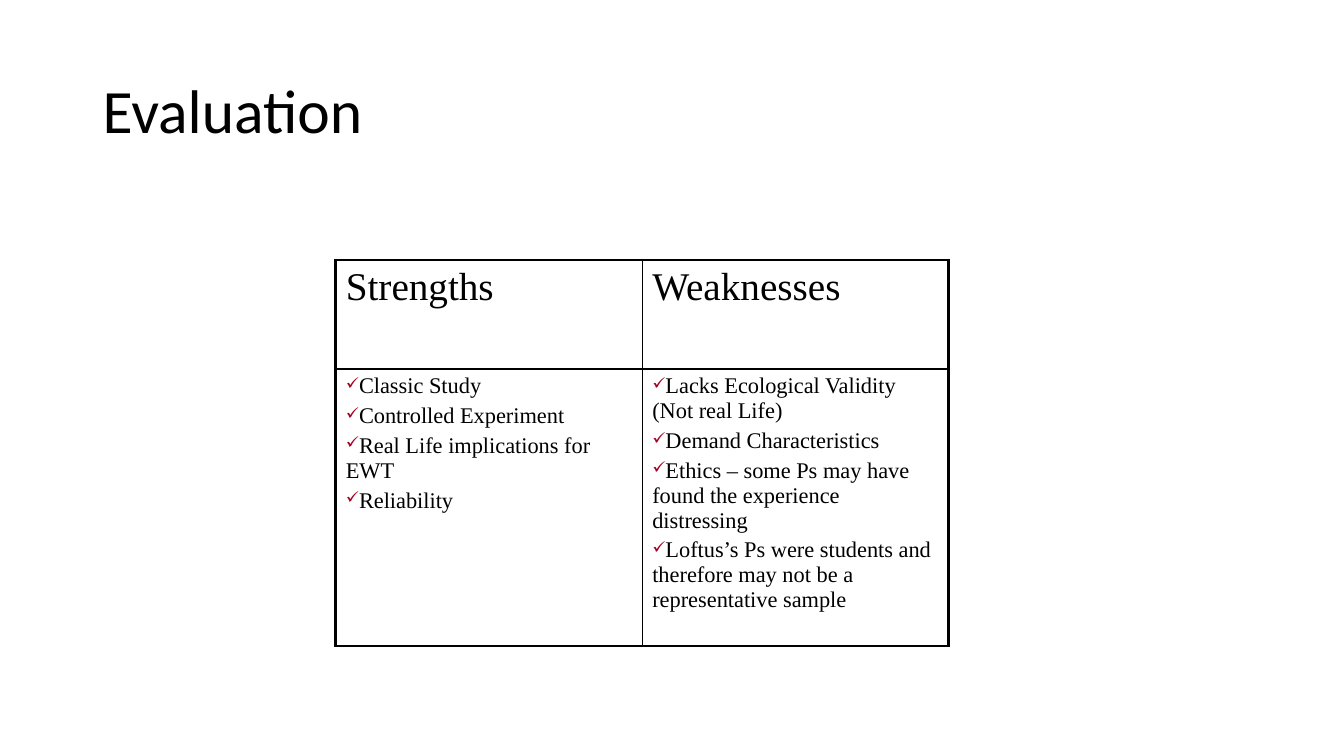
from lxml.etree import SubElement
from pptx import Presentation
from pptx.dml.color import RGBColor
from pptx.enum.text import MSO_ANCHOR
from pptx.oxml.ns import qn
from pptx.util import Inches, Pt

COLORS = {"text": "000000", "border": "000000", "check": "A50021"}
OUTER, INNER = 2.25, 1
HEADINGS = ["Strengths", "Weaknesses"]
POINTS = [
    ["Classic Study", "Controlled Experiment", "Real Life implications for EWT", "Reliability"],
    [
        "Lacks Ecological Validity (Not real Life)",
        "Demand Characteristics",
        "Ethics – some Ps may have found the experience distressing",
        "Loftus’s Ps were students and therefore may not be a representative sample",
    ],
]


def add_text(p, text, font, size):
    r = p.add_run()
    r.text = text
    for name, value in {"name": font, "size": Pt(size)}.items():
        setattr(r.font, name, value)
    r.font.color.rgb = RGBColor.from_string(COLORS["text"])


def add_check(p):
    pPr = p._p.get_or_add_pPr()
    color = SubElement(pPr, qn("a:buClr"))
    SubElement(color, qn("a:srgbClr"), val=COLORS["check"])
    SubElement(pPr, qn("a:buSzPct"), val="75000")
    SubElement(pPr, qn("a:buChar"), char="✓")


prs = Presentation()
prs.slide_width, prs.slide_height = Inches(13.33), Inches(7.5)
s = prs.slides.add_slide(prs.slide_layouts[6])

title = s.shapes.add_textbox(Inches(0.92), Inches(0.4), Inches(11.5), Inches(1.45))
tf = title.text_frame
tf.word_wrap = True
tf.vertical_anchor = MSO_ANCHOR.MIDDLE
tf.paragraphs[0].line_spacing = 0.9
add_text(tf.paragraphs[0], "Evaluation", "Calibri", 44)

table = s.shapes.add_table(2, 2, Inches(3.33), Inches(2.58), Inches(6.08), Inches(3.83)).table
table.first_row = table.horz_banding = False
for row, height in zip(table.rows, [1.08, 2.75]):
    row.height = Inches(height)

for col, (heading, points) in enumerate(zip(HEADINGS, POINTS)):
    table.columns[col].width = Inches(3.04)
    for row, (lines, size, gap) in enumerate([([heading], 28, 6), (points, 16, 3.5)]):
        cell = table.cell(row, col)
        tf = cell.text_frame
        for i, text in enumerate(lines):
            p = tf.add_paragraph() if i else tf.paragraphs[0]
            p.space_before = Pt(gap)
            if row == 1:
                add_check(p)
            add_text(p, text, "Times New Roman", size)

        tcPr = cell._tc.get_or_add_tcPr()
        edges = {"lnL": col == 0, "lnR": col == 1, "lnT": row == 0, "lnB": row == 1}
        for edge, is_outer in edges.items():
            width = Pt(OUTER if is_outer else INNER)
            ln = SubElement(tcPr, qn(f"a:{edge}"), w=str(width))
            fill = SubElement(ln, qn("a:solidFill"))
            SubElement(fill, qn("a:srgbClr"), val=COLORS["border"])
        cell.fill.background()

prs.save("out.pptx")
